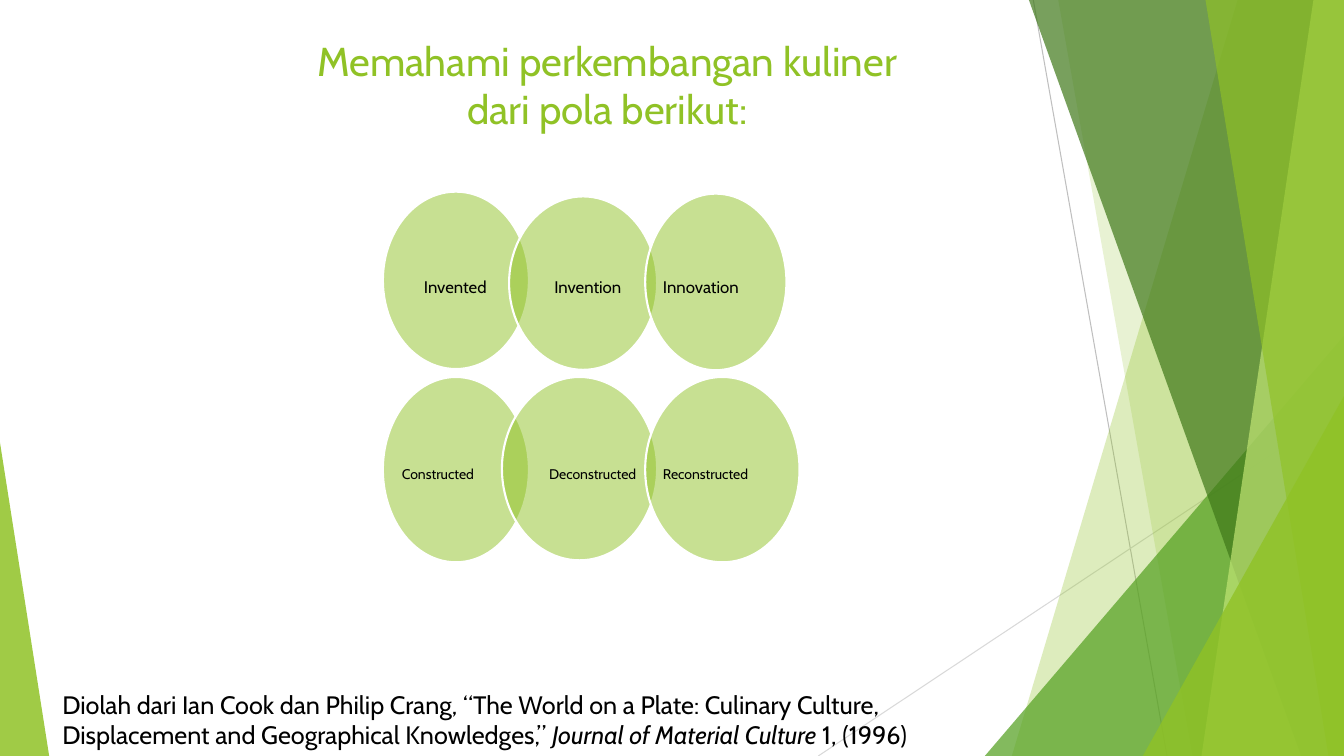
import pptx
import pptx.util
import pptx.dml.color
import pptx.enum.shapes
import pptx.enum.text
import pptx.oxml.ns
import lxml.etree

Cm, Pt = pptx.util.Cm, pptx.util.Pt
ALIGN = pptx.enum.text.PP_ALIGN
ANCHOR = pptx.enum.text.MSO_ANCHOR
PRESET = pptx.enum.shapes.MSO_SHAPE

COLORS = {
    "lime": "90C226", "green": "54A021", "forest": "3F7819", "pale": "C0E474",
    "white": "FFFFFF", "black": "000000", "gray": "BFBFBF", "light_gray": "D9D9D9",
}
FONT = "Cabin"
SLIDE_W, SLIDE_H = 33.87, 19.05

TITLE_LINES = ["Memahami perkembangan kuliner", "dari pola berikut:"]
TITLE_BOX = (4.93, 0.79, 20.75, 3.18)

CITATION = [
    ("Diolah dari Ian Cook dan Philip Crang, “The World on a Plate: Culinary Culture, "
     "Displacement and Geographical Knowledges,” ", False),
    ("Journal of Material Culture ", True),
    ("1, (1996)", False),
]
CITATION_BOX = (1.32, 17.25, 24.69, 1.8)

# Each stage: label, ellipse box, label left, label width, label alignment
PATTERNS = [
    {"size": 12, "middle": 7.27, "stages": [
        ("Invented", (9.65, 4.83, 3.68, 4.47), 10.13, 2.69, ALIGN.CENTER),
        ("Invention", (12.83, 4.95, 3.73, 4.37), 13.97, 2.24, ALIGN.LEFT),
        ("Innovation", (16.26, 4.88, 3.56, 4.45), 16.59, 2.03, ALIGN.RIGHT),
    ]},
    {"size": 10, "middle": 11.97, "stages": [
        ("Constructed", (9.65, 9.5, 3.68, 4.67), 10.13, 2.69, ALIGN.LEFT),
        ("Deconstructed", (12.65, 9.5, 3.91, 4.62), 13.84, 2.34, ALIGN.LEFT),
        ("Reconstructed", (16.26, 9.5, 3.89, 4.67), 16.61, 2.34, ALIGN.CENTER),
    ]},
]
LABEL_H = 2.4

RAYS = [
    ((26.04, 0), (29.41, SLIDE_H), "gray"),
    ((SLIDE_W, 10.24), (20.62, SLIDE_H), "light_gray"),
]
# Bands: x at the top, x at the bottom. Triangles: left, top, width, apex position.
FACETS = [
    ("band", (31.19, 25.5), "lime", 30),
    ("band", (26.67, 30.05), "lime", 20),
    ("triangle", (24.82, 8.46, 9.05, 1), "green", 72),
    ("band", (25.93, 32.79), "forest", 70),
    ("band", (33.1, 30.28), "pale", 70),
    ("band", (30.38, 33.48), "lime", 65),
    ("triangle", (28.8, 9.98, 5.07, 1), "lime", 80),
    ("triangle", (0, 11.15, 1.24, 0), "lime", 85),
]


def rgb(name):
    return pptx.dml.color.RGBColor.from_string(COLORS[name])


def cm(lengths):
    return [Cm(length) for length in lengths]


def paint(shape, color, opacity):
    """Fill a shape with a colour at the given opacity in percent, without line or shadow."""
    shape.shadow.inherit = False
    shape.fill.solid()
    shape.fill.fore_color.rgb = rgb(color)
    solid = shape.fill._xPr.find(pptx.oxml.ns.qn("a:solidFill"))
    lxml.etree.SubElement(solid[0], pptx.oxml.ns.qn("a:alpha"), val=str(opacity * 1000))
    shape.line.fill.background()


def add_ray(slide, start, end, color):
    ray = slide.shapes.add_connector(
        pptx.enum.shapes.MSO_CONNECTOR.STRAIGHT, *cm(start), *cm(end))
    ray.line.color.rgb = rgb(color)
    ray.line.width = Pt(0.75)
    properties = ray._element.spPr
    lxml.etree.SubElement(properties, pptx.oxml.ns.qn("a:effectLst"))


def add_band(slide, top_x, bottom_x):
    """Draw an outline from a slanted left side to the right edge of the slide."""
    outline = slide.shapes.build_freeform(Cm(top_x), 0)
    corners = [(SLIDE_W, 0), (SLIDE_W, SLIDE_H), (bottom_x, SLIDE_H)]
    outline.add_line_segments([cm(corner) for corner in corners], close=True)
    return outline.convert_to_shape()


def add_triangle(slide, left, top, width, apex):
    triangle = slide.shapes.add_shape(
        PRESET.ISOSCELES_TRIANGLE, *cm((left, top, width, SLIDE_H - top)))
    triangle.adjustments[0] = apex
    return triangle


def add_text_frame(slide, box, anchor=ANCHOR.TOP):
    frame = slide.shapes.add_textbox(*cm(box)).text_frame
    frame.word_wrap = True
    frame.vertical_anchor = anchor
    return frame


def add_run(paragraph, text, size, color, italic=False):
    run = paragraph.add_run()
    run.text = text
    run.font.name = FONT
    run.font.size = Pt(size)
    run.font.italic = italic
    run.font.color.rgb = rgb(color)


def add_stage(slide, stage, size, middle):
    label, ellipse_box, left, width, alignment = stage
    ellipse = slide.shapes.add_shape(PRESET.OVAL, *cm(ellipse_box))
    paint(ellipse, "lime", 50)
    ellipse.line.color.rgb = rgb("white")
    ellipse.line.width = Pt(1.5)

    frame = add_text_frame(
        slide, (left, middle - LABEL_H / 2, width, LABEL_H), ANCHOR.MIDDLE)
    frame.margin_left = frame.margin_right = frame.margin_top = frame.margin_bottom = 0
    paragraph = frame.paragraphs[0]
    paragraph.alignment = alignment
    paragraph.line_spacing = 0.9
    add_run(paragraph, label, size, "black")


def main():
    deck = pptx.Presentation()
    deck.slide_width, deck.slide_height = Cm(SLIDE_W), Cm(SLIDE_H)
    slide = deck.slides.add_slide(deck.slide_layouts[6])

    for ray in RAYS:
        add_ray(slide, *ray)
    draw = {"band": add_band, "triangle": add_triangle}
    for kind, geometry, color, opacity in FACETS:
        paint(draw[kind](slide, *geometry), color, opacity)

    title = add_text_frame(slide, TITLE_BOX).paragraphs[0]
    title.alignment = ALIGN.CENTER
    for number, line in enumerate(TITLE_LINES):
        if number:
            title.add_line_break()
        add_run(title, line, 28.8, "lime")

    for pattern in PATTERNS:
        for stage in pattern["stages"]:
            add_stage(slide, stage, pattern["size"], pattern["middle"])

    citation = add_text_frame(slide, CITATION_BOX).paragraphs[0]
    for text, italic in CITATION:
        add_run(citation, text, 18, "black", italic)

    deck.save("out.pptx")


if __name__ == "__main__":
    main()
